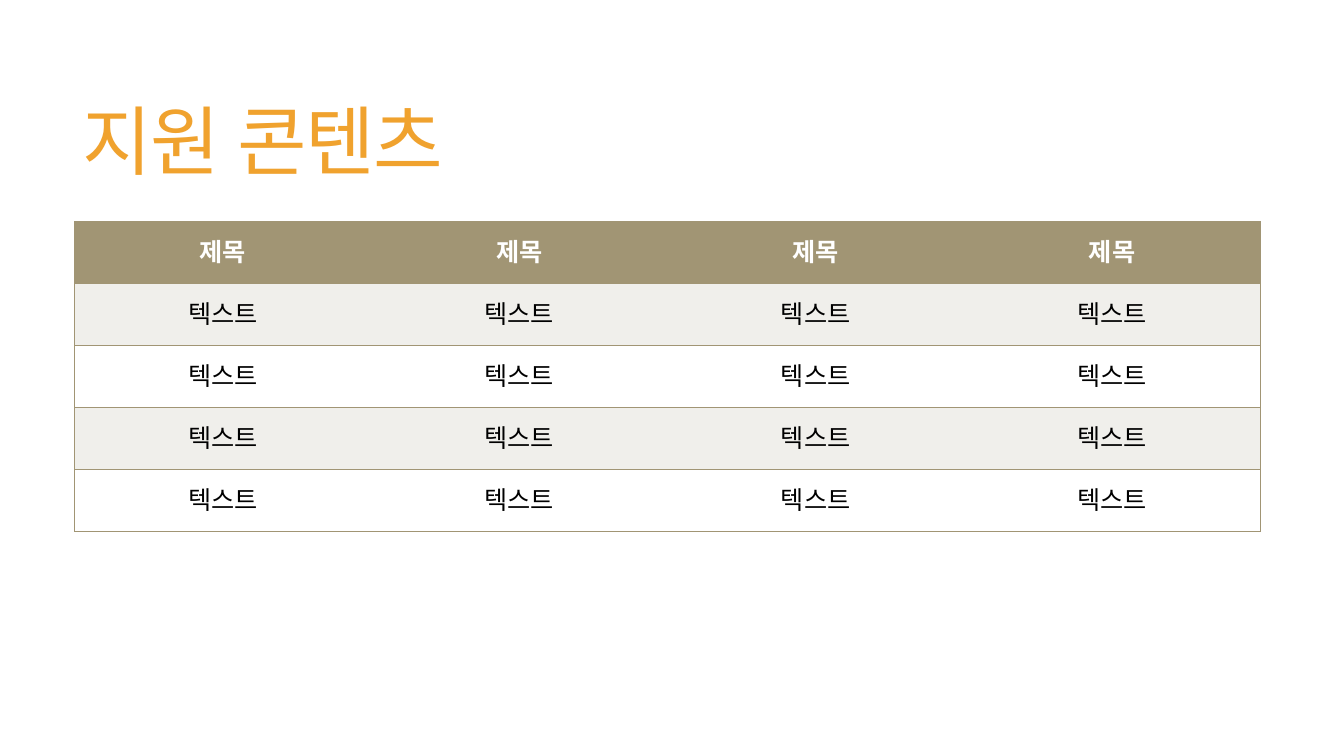
import pptx
import pptx.dml.color
import pptx.enum.text
import pptx.oxml.ns
import pptx.util
from lxml import etree

Cm = pptx.util.Cm
Pt = pptx.util.Pt
RGBColor = pptx.dml.color.RGBColor
PP_ALIGN = pptx.enum.text.PP_ALIGN
MSO_ANCHOR = pptx.enum.text.MSO_ANCHOR
qn = pptx.oxml.ns.qn

# Content
TITLE = "지원 콘텐츠"
COLUMNS = 4
ROWS = [["제목"] * COLUMNS] + [["텍스트"] * COLUMNS for _ in range(4)]

# Look
FONT = "Arial"
ORANGE = RGBColor(0xF0, 0xA2, 0x2E)
KHAKI = RGBColor(0xA1, 0x95, 0x74)
BAND = RGBColor(0xF0, 0xEF, 0xEB)
WHITE = RGBColor(0xFF, 0xFF, 0xFF)
BLACK = RGBColor(0, 0, 0)

# Layout
TABLE_LEFT, TABLE_TOP = Cm(1.88), Cm(5.59)
COLUMN_WIDTH, ROW_HEIGHT = Cm(7.47), Cm(1.56)


def add_span(para, text, size, colour, bold=False):
    span = para.add_run()
    span.text = text
    span.font.size = Pt(size)
    span.font.bold = bold
    span.font.color.rgb = colour
    span.font.name = FONT
    properties = span.font._element
    etree.SubElement(properties, qn("a:ea")).set("typeface", FONT)
    return properties


def set_borders(cell, visible):
    """Draw the sides in visible (letters of L, R, T, B) and clear the rest."""
    properties = cell._tc.get_or_add_tcPr()
    for side in "LRTB":
        line = etree.SubElement(properties, qn("a:ln" + side), w=str(Pt(1)))
        if side in visible:
            fill = etree.SubElement(line, qn("a:solidFill"))
            etree.SubElement(fill, qn("a:srgbClr"), val=str(KHAKI))
        else:
            etree.SubElement(line, qn("a:noFill"))


def add_title(page):
    box = page.shapes.title
    box.left, box.top, box.width, box.height = Cm(1.83), Cm(1.4), Cm(29.92), Cm(4.6)
    frame = box.text_frame
    frame.auto_size = pptx.enum.text.MSO_AUTO_SIZE.NONE
    frame.vertical_anchor = MSO_ANCHOR.MIDDLE
    para = frame.paragraphs[0]
    para.alignment = PP_ALIGN.LEFT
    para.line_spacing = 0.85
    add_span(para, TITLE, 54, ORANGE).set("spc", "-120")


def add_content_table(page):
    table = page.shapes.add_table(
        len(ROWS), COLUMNS, TABLE_LEFT, TABLE_TOP,
        COLUMN_WIDTH * COLUMNS, ROW_HEIGHT * len(ROWS)).table
    table.horz_banding = False
    for column in table.columns:
        column.width = COLUMN_WIDTH
    for row_index, texts in enumerate(ROWS):
        table.rows[row_index].height = ROW_HEIGHT
        header = row_index == 0
        fill = KHAKI if header else BAND if row_index % 2 else WHITE
        for column_index, text in enumerate(texts):
            cell = table.cell(row_index, column_index)
            # Horizontal rules everywhere, vertical ones on the outer edges only
            edges = {0: "L", COLUMNS - 1: "R"}
            set_borders(cell, "TB" + edges.get(column_index, ""))
            cell.fill.solid()
            cell.fill.fore_color.rgb = fill
            cell.vertical_anchor = MSO_ANCHOR.MIDDLE
            para = cell.text_frame.paragraphs[0]
            para.alignment = PP_ALIGN.CENTER
            add_span(para, text, 18, WHITE if header else BLACK, header)


def main():
    deck = pptx.Presentation()
    deck.slide_width, deck.slide_height = Cm(33.87), Cm(19.05)
    page = deck.slides.add_slide(deck.slide_layouts[5])  # title only
    add_title(page)
    add_content_table(page)
    deck.save("out.pptx")


if __name__ == "__main__":
    main()
